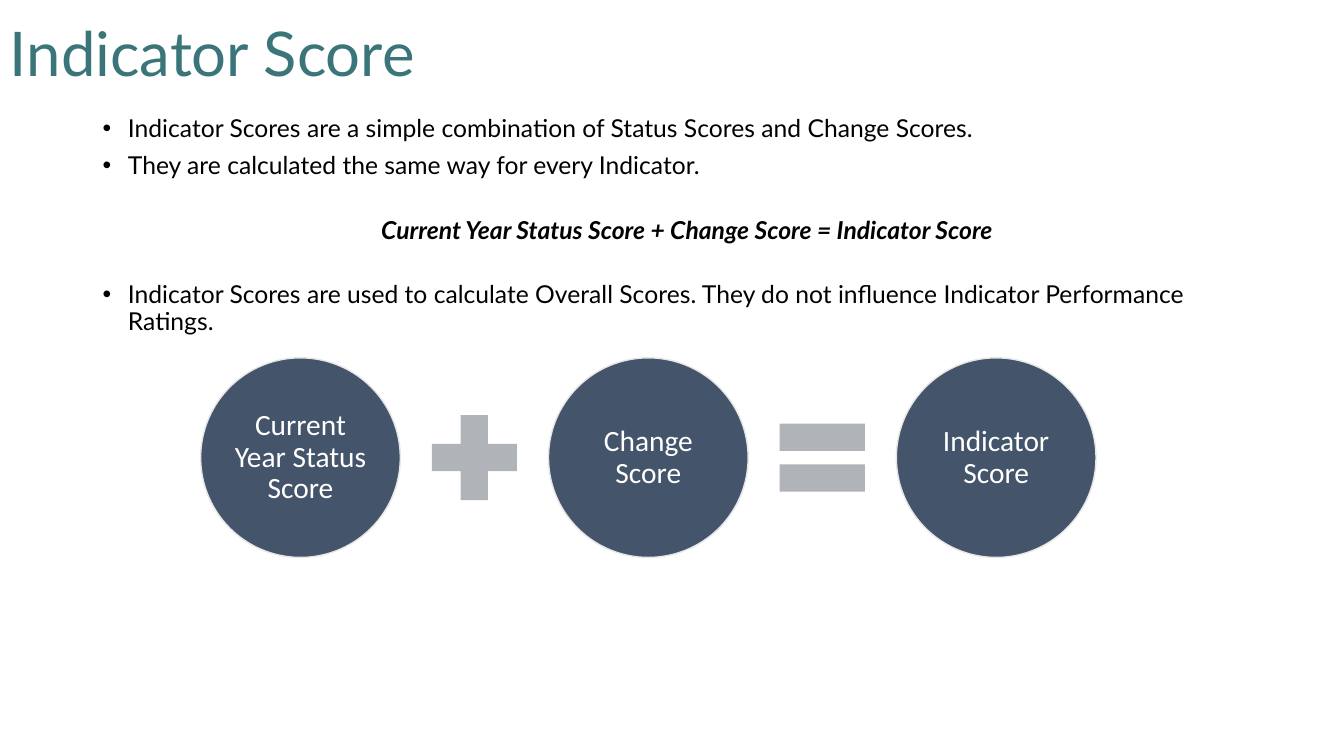
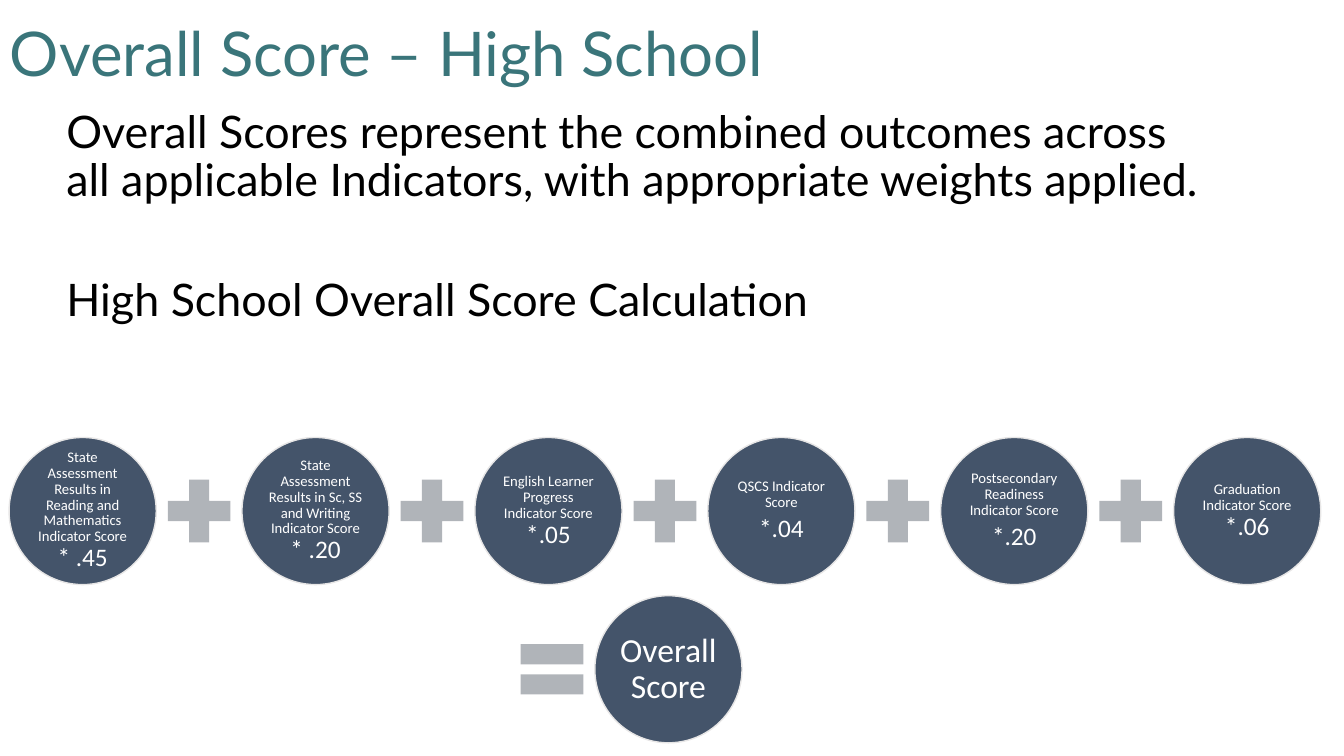
from dataclasses import dataclass
from typing import Optional

from lxml.etree import SubElement
from pptx import Presentation
from pptx.dml.color import RGBColor
from pptx.enum.shapes import MSO_SHAPE
from pptx.enum.text import MSO_ANCHOR, PP_ALIGN
from pptx.oxml.ns import qn
from pptx.slide import Slide
from pptx.util import Inches, Pt

COLORS = {
    "title": "3A757A",
    "body": "000000",
    "circle": "44546A",
    "outline": "E7E6E6",
    "operator": "B0B4B9",
    "circle_text": "FFFFFF",
}
HEADING_FONT = "Lato"
CIRCLE_FONT = "Calibri"
LINE_SPACING = 0.9
OPERATOR_RATIO = 0.58
PLUS = MSO_SHAPE.MATH_PLUS
EQUAL = MSO_SHAPE.MATH_EQUAL


@dataclass
class Line:
    text: str
    size: float
    color: str = "body"
    font: str = HEADING_FONT
    align: PP_ALIGN = PP_ALIGN.LEFT
    before: float = 0
    after: float = 0
    bullet: bool = False
    emphasis: bool = False


@dataclass
class Term:
    label: str
    size: float
    weight: str = ""
    gap: float = 0
    operator: Optional[MSO_SHAPE] = PLUS


@dataclass
class Row:
    left: float
    top: float
    diameter: float
    pitch: float
    terms: list[Term]


def color(name: str) -> RGBColor:
    return RGBColor.from_string(COLORS[name])


def write_lines(text_frame, lines: list[Line]) -> None:
    text_frame.word_wrap = True
    text_frame.text = "\n".join(line.text for line in lines)
    for paragraph, line in zip(text_frame.paragraphs, lines):
        paragraph.alignment = line.align
        paragraph.line_spacing = LINE_SPACING
        paragraph.space_before = Pt(line.before)
        paragraph.space_after = Pt(line.after)
        if line.bullet:
            properties = paragraph._p.get_or_add_pPr()
            properties.set("marL", str(Inches(0.25)))
            properties.set("indent", str(-Inches(0.25)))
            SubElement(properties, qn("a:buFont")).set("typeface", "Arial")
            SubElement(properties, qn("a:buChar")).set("char", "•")
        for run in paragraph.runs:
            run.font.name = line.font
            run.font.size = Pt(line.size)
            run.font.color.rgb = color(line.color)
            run.font.bold = line.emphasis
            run.font.italic = line.emphasis


def add_text(slide: Slide, left: float, top: float, width: float, height: float,
             lines: list[Line], anchor: MSO_ANCHOR = MSO_ANCHOR.TOP) -> None:
    shape = slide.shapes.add_textbox(
        Inches(left), Inches(top), Inches(width), Inches(height))
    shape.text_frame.vertical_anchor = anchor
    write_lines(shape.text_frame, lines)


def add_titled_slide(presentation, title: str) -> Slide:
    slide = presentation.slides.add_slide(presentation.slide_layouts[6])
    add_text(slide, 0, 0.02, 11.5, 1.08, [Line(title, 44, "title")], MSO_ANCHOR.MIDDLE)
    return slide


def add_filled_shape(slide: Slide, kind: MSO_SHAPE, left: float, top: float,
                     size: float, fill: str):
    shape = slide.shapes.add_shape(
        kind, Inches(left), Inches(top), Inches(size), Inches(size))
    shape.shadow.inherit = False
    shape.fill.solid()
    shape.fill.fore_color.rgb = color(fill)
    shape.line.fill.background()
    return shape


def add_circle(slide: Slide, left: float, top: float, diameter: float, term: Term) -> None:
    circle = add_filled_shape(slide, MSO_SHAPE.OVAL, left, top, diameter, "circle")
    circle.line.color.rgb = color("outline")
    circle.line.width = Pt(1)
    text_frame = circle.text_frame
    text_frame.vertical_anchor = MSO_ANCHOR.MIDDLE
    text_frame.margin_left = text_frame.margin_right = Inches(0.02)
    text_frame.margin_top = text_frame.margin_bottom = Inches(0.02)
    style = ("circle_text", CIRCLE_FONT, PP_ALIGN.CENTER)
    lines = [Line(term.label, term.size, *style, after=term.gap)]
    if term.weight:
        lines.append(Line(term.weight, 18, *style))
    write_lines(text_frame, lines)


def add_row(slide: Slide, row: Row) -> None:
    operator_size = row.diameter * OPERATOR_RATIO
    inset = (row.diameter - operator_size) / 2
    for index, term in enumerate(row.terms):
        left = row.left + index * row.pitch
        if term.operator is not None:
            add_filled_shape(slide, term.operator, left - row.pitch / 2 + inset,
                             row.top + inset, operator_size, "operator")
        add_circle(slide, left, row.top, row.diameter, term)


def build_indicator_score(presentation) -> None:
    slide = add_titled_slide(presentation, "Indicator Score")
    add_text(slide, 0.92, 1.1, 11.79, 2.4, [
        Line("Indicator Scores are a simple combination of Status Scores and Change Scores.",
             17.6, before=8, bullet=True),
        Line("They are calculated the same way for every Indicator.",
             17.6, before=8, bullet=True),
        Line("Current Year Status Score + Change Score = Indicator Score",
             17.6, align=PP_ALIGN.CENTER, before=27, emphasis=True),
        Line("Indicator Scores are used to calculate Overall Scores. "
             "They do not influence Indicator Performance Ratings.",
             17.6, before=27, bullet=True),
    ])
    add_row(slide, Row(1.99, 3.55, 1.98, 3.45, [
        Term("Current Year Status Score", 21, operator=None),
        Term("Change Score", 21),
        Term("Indicator Score", 21, operator=EQUAL),
    ]))


def build_overall_score(presentation) -> None:
    slide = add_titled_slide(presentation, "Overall Score – High School")
    add_text(slide, 0.56, 1.04, 11.56, 2.48, [
        Line("Overall Scores represent the combined outcomes across all applicable "
             "Indicators, with appropriate weights applied.", 32, before=8),
        Line("High School Overall Score Calculation", 32, before=51),
    ])
    diameter, pitch = 1.46, 2.31
    add_row(slide, Row(0.09, 4.34, diameter, pitch, [
        Term("State Assessment Results in Reading and Mathematics Indicator Score",
             10.5, "* .45", operator=None),
        Term("State Assessment Results in Sc, SS and Writing Indicator Score", 10.5, "* .20"),
        Term("English Learner Progress Indicator Score", 10.5, "*.05"),
        Term("QSCS Indicator Score", 10.5, "*.04", gap=4),
        Term("Postsecondary Readiness Indicator Score", 10.5, "*.20", gap=4),
        Term("Graduation Indicator Score", 10.5, "*.06"),
    ]))
    add_row(slide, Row(5.9, 5.91, diameter, pitch,
                       [Term("Overall Score", 24, operator=EQUAL)]))


def main() -> None:
    presentation = Presentation()
    presentation.slide_width = Inches(13.33)
    presentation.slide_height = Inches(7.5)
    build_indicator_score(presentation)
    build_overall_score(presentation)
    presentation.save("out.pptx")


if __name__ == "__main__":
    main()
